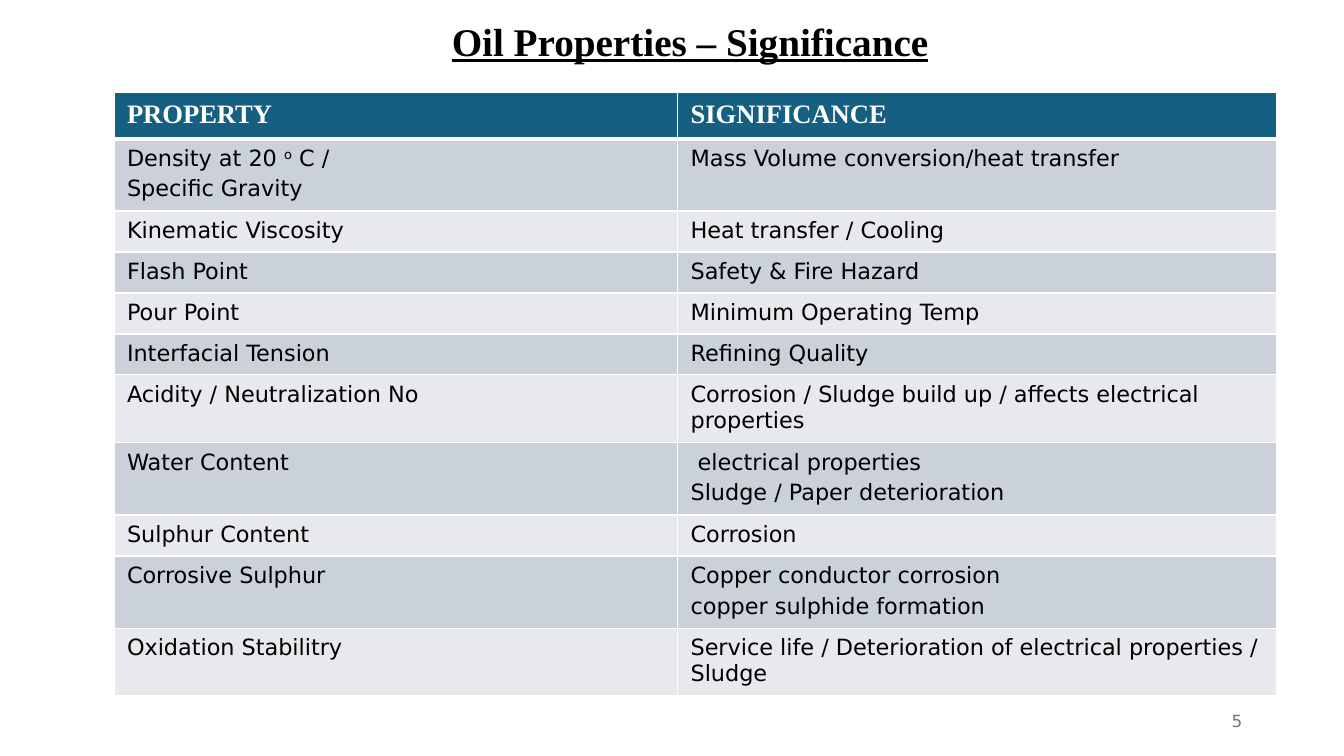
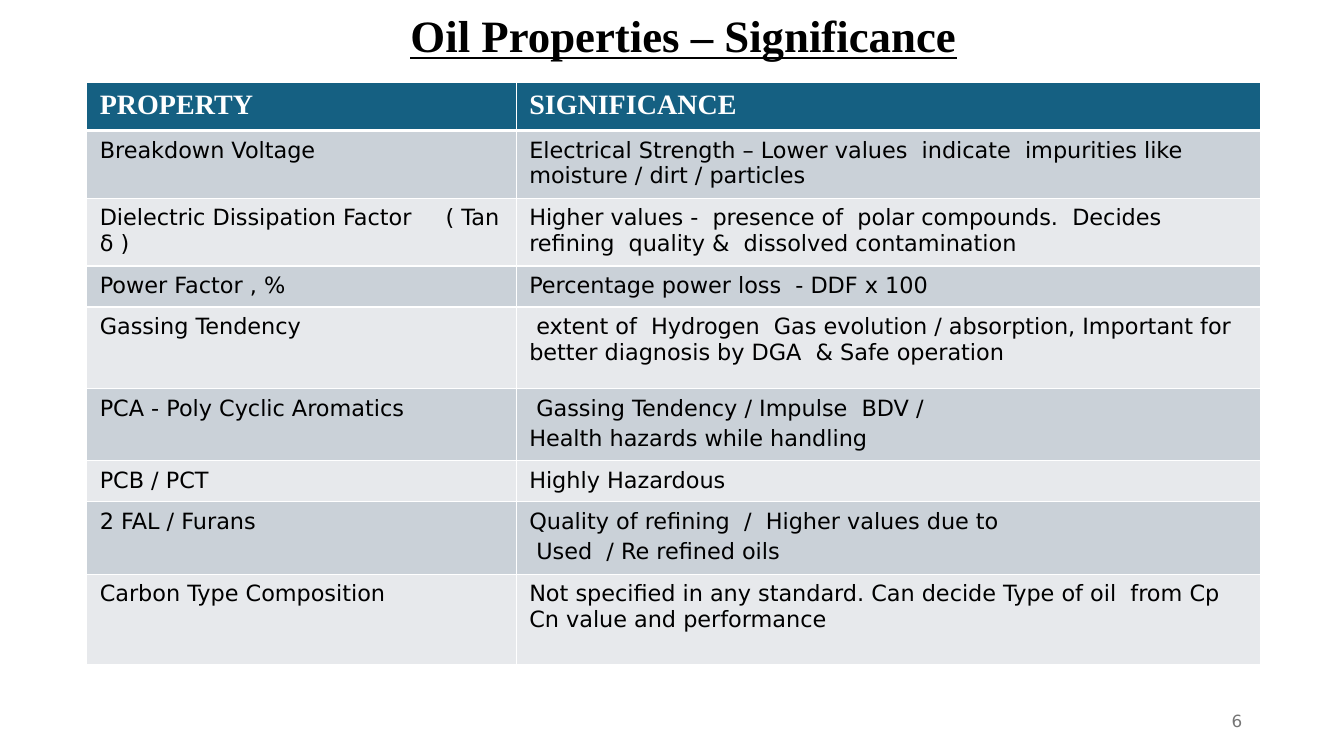
from dataclasses import dataclass
from itertools import accumulate

from lxml.etree import SubElement
from pptx import Presentation
from pptx.dml.color import RGBColor
from pptx.enum.text import MSO_ANCHOR, PP_ALIGN
from pptx.oxml.ns import qn
from pptx.util import Inches, Pt


@dataclass(frozen=True)
class Theme:
    ink: str = "000000"
    paper: str = "FFFFFF"
    header: str = "156082"
    bands: tuple = ("CAD1D8", "E7E9EC")
    muted: str = "757575"
    serif: str = "Times New Roman"
    sans: str = "DejaVu Sans"
    body: int = 16
    footer: int = 12
    rule: int = 1
    header_rule: int = 3
    para_gap: float = 3.2


@dataclass(frozen=True)
class Box:
    left: float
    top: float
    width: float
    height: float

    def emu(self):
        return [Inches(n) for n in (self.left, self.top, self.width, self.height)]


THEME = Theme()
WIDTH, HEIGHT = 13.33, 7.5
PAD_X, PAD_Y = 0.13, 0.07
# Row heights by content: one line, a wrapped line, two paragraphs
ONE, WRAP, PAIR = 0.39, 0.65, 0.69
FOOTER = Box(9.42, 6.95, 3, 0.4)
TITLE = "Oil Properties – Significance"
HEADINGS = ("PROPERTY", "SIGNIFICANCE")


def write(tf, text, *, size, font, color, bold=False, underline=False,
          align=PP_ALIGN.LEFT, spacing=None, gap=0, tab=None):
    """Fill a text frame: a newline starts a paragraph, ^x^ is superscript."""
    tf.word_wrap = True
    for i, line in enumerate(text.split("\n")):
        p = tf.add_paragraph() if i else tf.paragraphs[0]
        p.alignment = align
        if spacing:
            p.line_spacing = spacing
        if i:
            p.space_before = Pt(gap)
        if tab and "\t" in line:
            stops = SubElement(p._p.get_or_add_pPr(), qn("a:tabLst"))
            SubElement(stops, qn("a:tab"), pos=str(Inches(tab)), algn="l")
        for j, part in enumerate(line.split("^")):
            r = p.add_run()
            r.text = part
            r.font.size, r.font.name = Pt(size), font
            r.font.bold, r.font.underline = bold, underline
            r.font.color.rgb = RGBColor.from_string(color)
            if j % 2:
                r._r.get_or_add_rPr().set("baseline", "30000")


def add_text(s, box, text, anchor, **fmt):
    tf = s.shapes.add_textbox(*box.emu()).text_frame
    tf.vertical_anchor = anchor
    write(tf, text, **fmt)


def set_borders(cell, bottom):
    tcPr = cell._tc.get_or_add_tcPr()
    for side in ("L", "R", "T", "B"):
        weight = bottom if side == "B" else THEME.rule
        ln = SubElement(tcPr, qn(f"a:ln{side}"), w=str(Pt(weight)))
        fill = SubElement(ln, qn("a:solidFill"))
        SubElement(fill, qn("a:srgbClr"), val=THEME.paper)


def fill_cell(cell, text, fill, bottom, **fmt):
    cell.margin_left = cell.margin_right = Inches(PAD_X)
    cell.margin_top = cell.margin_bottom = Inches(PAD_Y)
    set_borders(cell, bottom)
    cell.fill.solid()
    cell.fill.fore_color.rgb = RGBColor.from_string(fill)
    write(cell.text_frame, text, **fmt)


def add_property_table(s, box, split, header_size, header_height, rows, tab=None):
    """Two columns; split is the first column's width within the box."""
    shape = s.shapes.add_table(len(rows) + 1, 2, *box.emu())
    table = shape.table
    for col, width in zip(table.columns, (split, box.width - split)):
        col.width = Inches(width)

    # Heights are rounded from running totals, so they add up to the box
    heights = [header_height] + [row[0] for row in rows]
    edges = [0] + [Inches(n) for n in accumulate(heights)]
    for row, top, bottom in zip(table.rows, edges, edges[1:]):
        row.height = bottom - top

    # Header
    for c, text in enumerate(HEADINGS):
        fill_cell(table.cell(0, c), text, THEME.header, THEME.header_rule,
                  size=header_size, font=THEME.serif, color=THEME.paper, bold=True)

    # Banded body
    for i, (_, *texts) in enumerate(rows):
        for c, text in enumerate(texts):
            fill_cell(table.cell(i + 1, c), text, THEME.bands[i % 2], THEME.rule,
                      size=THEME.body, font=THEME.sans, color=THEME.ink,
                      gap=THEME.para_gap, tab=tab)


def add_property_slide(prs, number, title_box, title_size, **table):
    s = prs.slides.add_slide(prs.slide_layouts[6])
    add_text(s, title_box, TITLE, MSO_ANCHOR.BOTTOM, size=title_size,
             font=THEME.serif, color=THEME.ink, bold=True, underline=True,
             align=PP_ALIGN.CENTER, spacing=0.9)
    add_property_table(s, **table)
    add_text(s, FOOTER, str(number), MSO_ANCHOR.MIDDLE, size=THEME.footer,
             font=THEME.sans, color=THEME.muted, align=PP_ALIGN.RIGHT)


PHYSICAL_ROWS = [
    (PAIR, "Density at 20 ^o^ C /\nSpecific Gravity",
     "Mass Volume conversion/heat transfer"),
    (ONE, "Kinematic Viscosity", "Heat transfer / Cooling"),
    (ONE, "Flash Point", "Safety & Fire Hazard"),
    (ONE, "Pour Point", "Minimum Operating Temp"),
    (ONE, "Interfacial Tension", "Refining Quality"),
    (WRAP, "Acidity / Neutralization No",
     "Corrosion / Sludge build up / affects electrical properties"),
    (PAIR, "Water Content", " electrical properties\nSludge / Paper deterioration"),
    (ONE, "Sulphur Content", "Corrosion"),
    (PAIR, "Corrosive Sulphur", "Copper conductor corrosion\ncopper sulphide formation"),
    (0.67, "Oxidation Stabilitry",
     "Service life / Deterioration of electrical properties / Sludge"),
]

ELECTRICAL_ROWS = [
    (WRAP, "Breakdown Voltage",
     "Electrical Strength – Lower values  indicate  impurities like "
     "moisture / dirt / particles"),
    (WRAP, "Dielectric Dissipation Factor\t( Tan δ )",
     "Higher values -  presence of  polar compounds.  Decides refining  "
     "quality &  dissolved contamination"),
    (ONE, "Power Factor , %", "Percentage power loss  - DDF x 100"),
    (0.81, "Gassing Tendency",
     " extent of  Hydrogen  Gas evolution / absorption, Important for  "
     "better diagnosis by DGA  & Safe operation"),
    (PAIR, "PCA - Poly Cyclic Aromatics",
     " Gassing Tendency / Impulse  BDV /\nHealth hazards while handling"),
    (ONE, "PCB / PCT", "Highly Hazardous"),
    (PAIR, "2 FAL / Furans",
     "Quality of refining  /  Higher values due to\n Used  / Re refined oils"),
    (0.9, "Carbon Type Composition",
     "Not specified in any standard. Can decide Type of oil  from Cp  "
     "Cn value and performance"),
]


def main():
    prs = Presentation()
    prs.slide_width, prs.slide_height = Inches(WIDTH), Inches(HEIGHT)
    add_property_slide(prs, 5, Box(0.56, 0, 12.57, 0.69), 28,
                       box=Box(1.13, 0.92, 11.53, 5.78), split=5.59,
                       header_size=19, header_height=0.44, rows=PHYSICAL_ROWS)
    add_property_slide(prs, 6, Box(0.52, 0, 12.52, 0.67), 32,
                       box=Box(0.86, 0.82, 11.64, 5.6), split=4.26,
                       header_size=20, header_height=0.43, rows=ELECTRICAL_ROWS,
                       tab=3.43)
    prs.save("out.pptx")


if __name__ == "__main__":
    main()
